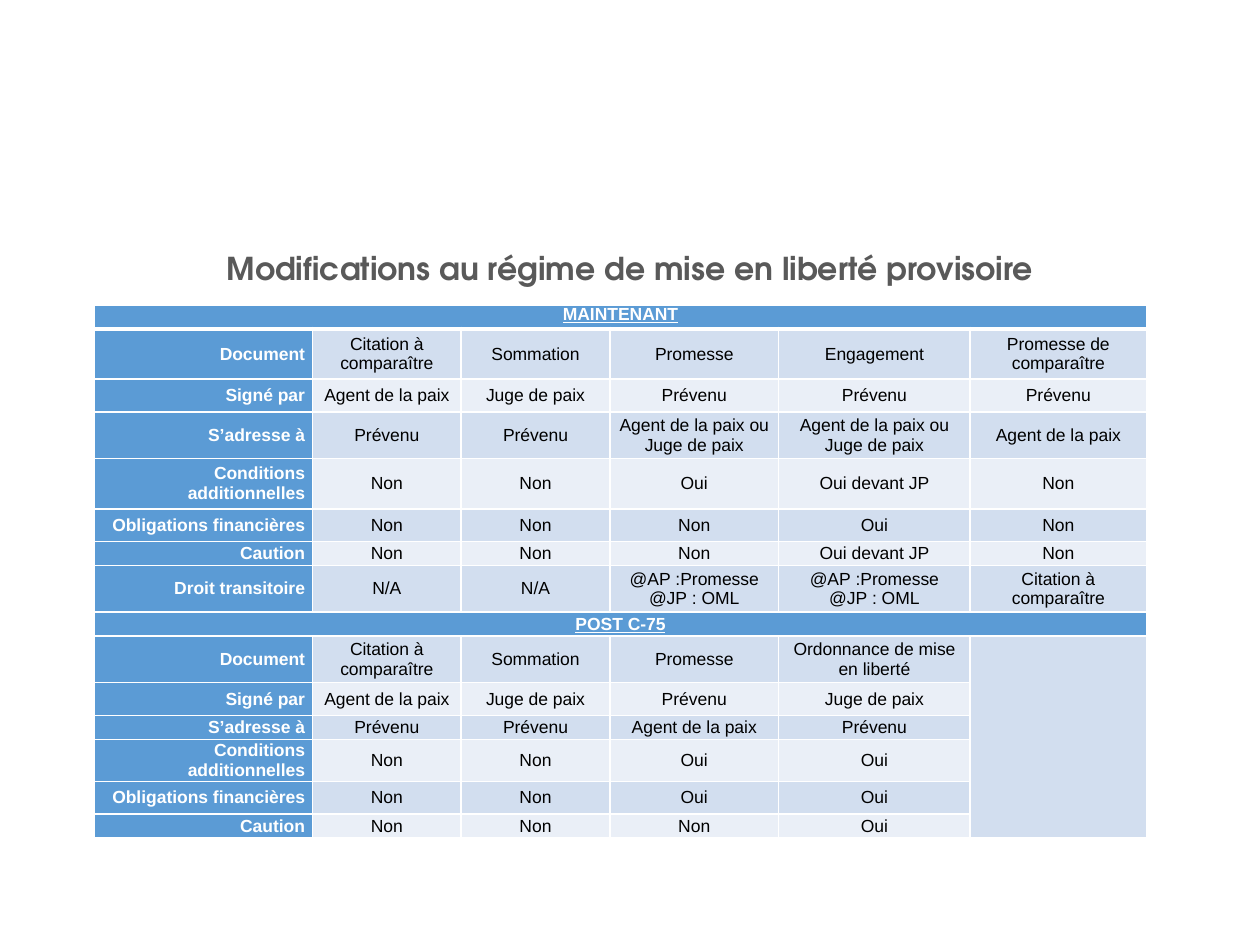
import pptx
import pptx.dml.color
import pptx.enum.text
import pptx.oxml
import pptx.oxml.ns
import pptx.util

Inches = pptx.util.Inches
Pt = pptx.util.Pt
Align = pptx.enum.text.PP_ALIGN
Color = pptx.dml.color.RGBColor

WHITE = Color(0xFF, 0xFF, 0xFF)
BLACK = Color(0, 0, 0)
GRAY = Color(0x59, 0x59, 0x59)
BLUE = Color(0x5B, 0x9B, 0xD5)
BANDS = Color(0xD2, 0xDE, 0xEF), Color(0xEA, 0xEF, 0xF7)

HEAD = {"name": "TeX Gyre Adventor", "size": Pt(18), "bold": True}
BODY = {"name": "Arial", "size": Pt(10), "bold": False, "underline": False}
LABEL = {**BODY, "bold": True}
PHASE = {**LABEL, "underline": True}

WIDTHS = 1.73, 1.18, 1.18, 1.34, 1.52, 1.4
HEIGHTS = (0.19, 0.4, 0.26, 0.37, 0.4, 0.26, 0.19, 0.37,
           0.19, 0.37, 0.26, 0.19, 0.28, 0.26, 0.19)
RELEASE = "@AP\u00a0:Promesse\n@JP\u00a0: OML"
NOW = [
    ("Document", "Citation à comparaître", "Sommation", "Promesse",
     "Engagement", "Promesse de comparaître"),
    ("Signé par", "Agent de la paix", "Juge de paix", "Prévenu", "Prévenu", "Prévenu"),
    ("S’adresse à", "Prévenu", "Prévenu", "Agent de la paix ou Juge de paix",
     "Agent de la paix ou Juge de paix", "Agent de la paix"),
    ("Conditions additionnelles", "Non", "Non", "Oui", "Oui devant JP", "Non"),
    ("Obligations financières", "Non", "Non", "Non", "Oui", "Non"),
    ("Caution", "Non", "Non", "Non", "Oui devant JP", "Non"),
    ("Droit transitoire", "N/A", "N/A", RELEASE, RELEASE, "Citation à comparaître"),
]
POST = [
    ("Document", "Citation à comparaître", "Sommation", "Promesse",
     "Ordonnance de mise en liberté"),
    ("Signé par", "Agent de la paix", "Juge de paix", "Prévenu", "Juge de paix"),
    ("S’adresse à", "Prévenu", "Prévenu", "Agent de la paix", "Prévenu"),
    ("Conditions additionnelles", "Non", "Non", "Oui", "Oui"),
    ("Obligations financières", "Non", "Non", "Oui", "Oui"),
    ("Caution", "Non", "Non", "Non", "Oui"),
]


def assign(item, values):
    for key, value in values.items():
        setattr(item, key, value)


def write(frame, text, style, color, align):
    frame.text = text
    for para in frame.paragraphs:
        para.alignment = align
        for run in para.runs:
            assign(run.font, style)
            run.font.color.rgb = color


def border(cell, wide=None):
    props = cell._tc.get_or_add_tcPr()
    for side in "LRTB":
        width = Pt(3 if side == wide else 1)
        props.append(pptx.oxml.parse_xml(
            f'<a:ln{side} {pptx.oxml.ns.nsdecls("a")} w="{width}">'
            f'<a:solidFill><a:srgbClr val="{WHITE}"/></a:solidFill></a:ln{side}>'))


def paint(cell, color, wide=None):
    border(cell, wide)
    assign(cell, {"margin_left": Inches(0.06), "margin_right": Inches(0.06),
                  "margin_top": 0, "margin_bottom": 0,
                  "vertical_anchor": pptx.enum.text.MSO_ANCHOR.MIDDLE})
    cell.fill.solid()
    cell.fill.fore_color.rgb = color


def add_phase(grid, top, name, rows):
    last = len(WIDTHS) - 1
    first = top == 0
    for col in range(last + 1):
        paint(grid.cell(top, col), BLUE, "B" if first else None)
    banner = grid.cell(top, 0)
    banner.merge(grid.cell(top, last))
    write(banner.text_frame, name, PHASE, WHITE, Align.CENTER)
    if first:
        banner.vertical_anchor = pptx.enum.text.MSO_ANCHOR.TOP
    for step, row in enumerate(rows):
        line = top + 1 + step
        for col in range(last + 1):
            cell = grid.cell(line, col)
            label = col == 0
            fill = BLUE if label else BANDS[step % 2]
            paint(cell, fill, "T" if line == 1 else None)
            if col < len(row):
                write(cell.text_frame, row[col], LABEL if label else BODY,
                      WHITE if label else BLACK, Align.RIGHT if label else Align.CENTER)
    if len(rows[0]) <= last:
        grid.cell(top + 1, last).merge(grid.cell(top + len(rows), last))


def add_grid(slide, left, top, width, height):
    grid = slide.shapes.add_table(
        len(HEIGHTS), len(WIDTHS), left, top, width, height).table
    for col, size in zip(grid.columns, WIDTHS):
        col.width = Inches(size)
    for row, size in zip(grid.rows, HEIGHTS):
        row.height = Inches(size)
    add_phase(grid, 0, "MAINTENANT", NOW)
    add_phase(grid, len(NOW) + 1, "POST C-75", POST)


def add_title(slide, left, top, width, height):
    title = slide.shapes.title
    assign(title, {"left": left, "top": top, "width": width, "height": height})
    frame = title.text_frame
    assign(frame, {"word_wrap": True,
                   "auto_size": pptx.enum.text.MSO_AUTO_SIZE.SHAPE_TO_FIT_TEXT,
                   "vertical_anchor": pptx.enum.text.MSO_ANCHOR.MIDDLE})
    write(frame, "Modifications au régime de mise en liberté provisoire",
          HEAD, GRAY, Align.CENTER)


def main():
    deck = pptx.Presentation()
    assign(deck, {"slide_width": Inches(10), "slide_height": Inches(7.5)})
    slide = deck.slides.add_slide(deck.slide_layouts[5])
    add_title(slide, 0, Inches(1.93), Inches(10), Inches(0.4))
    add_grid(slide, Inches(0.75), Inches(2.42), Inches(8.35), Inches(4.16))
    deck.save("out.pptx")


if __name__ == "__main__":
    main()
